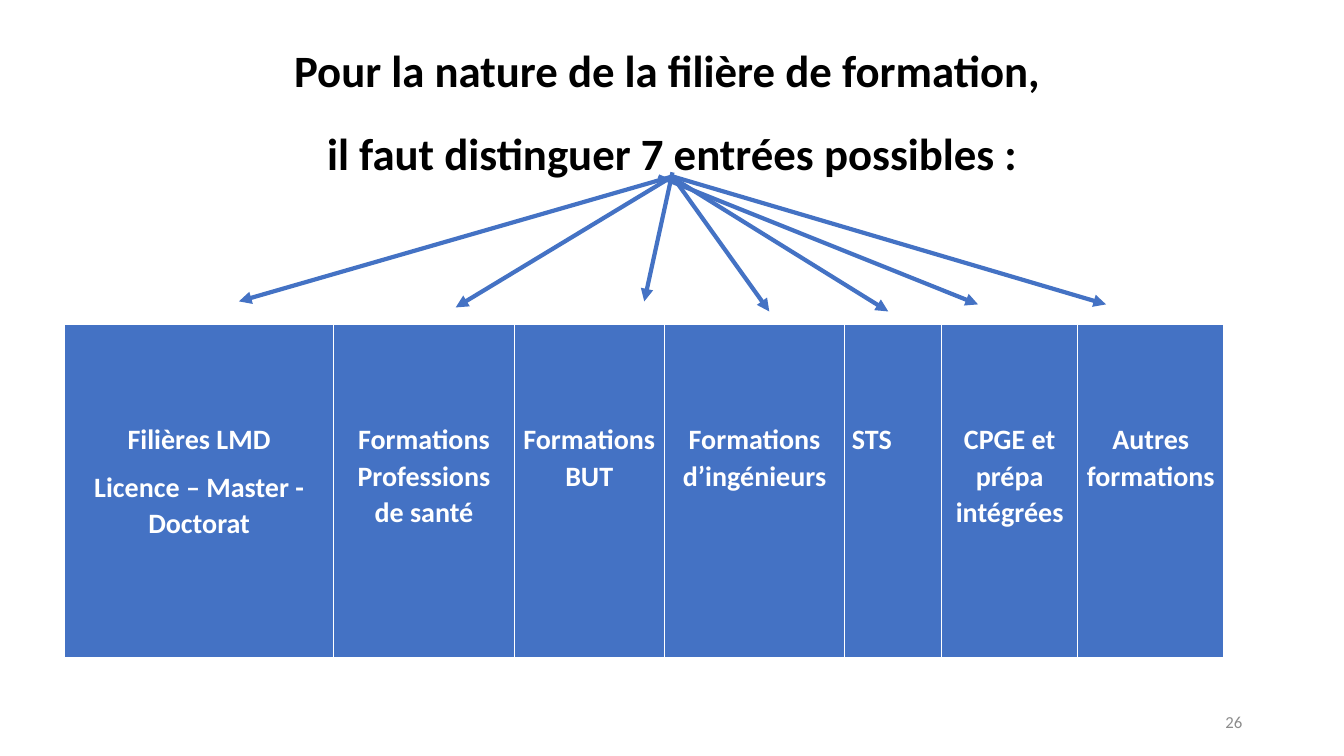
from dataclasses import dataclass

from lxml.etree import SubElement
from pptx import Presentation
from pptx.dml.color import RGBColor
from pptx.enum.shapes import MSO_CONNECTOR
from pptx.enum.text import MSO_ANCHOR, PP_ALIGN
from pptx.oxml.ns import qn
from pptx.util import Inches, Pt


@dataclass(frozen=True)
class Theme:
    """Fonts, colours and type sizes of the slide."""

    font: str = "Calibri"
    ink: RGBColor = RGBColor(0x00, 0x00, 0x00)
    paper: RGBColor = RGBColor(0xFF, 0xFF, 0xFF)
    accent: RGBColor = RGBColor(0x44, 0x72, 0xC4)
    muted: RGBColor = RGBColor(0x8C, 0x8C, 0x8C)
    title: int = 32
    body: int = 20
    small: int = 12
    spacing: float = 1.07


class SlideBuilder:
    """Draws styled elements on one slide."""

    def __init__(self, slide, theme):
        """Keep the current slide and its style."""
        self.s = slide
        self.theme = theme

    def set_text(self, tf, lines, size, color, align, bold=True, before=0, after=8):
        """Fill a text frame with one styled paragraph per line."""
        tf.word_wrap = True
        tf.text = "\n".join(lines)
        for p in tf.paragraphs:
            p.alignment = align
            p.line_spacing = self.theme.spacing
            p.space_before = Pt(before)
            p.space_after = Pt(after)
            for r in p.runs:
                r.font.name = self.theme.font
                r.font.size = Pt(size)
                r.font.bold = bold
                r.font.color.rgb = color

    def text(self, box, lines, size, color, align, anchor=MSO_ANCHOR.TOP, **style):
        """Add a text box."""
        tf = self.s.shapes.add_textbox(*map(Inches, box)).text_frame
        tf.vertical_anchor = anchor
        self.set_text(tf, lines, size, color, align, **style)

    def table(self, left, top, height, columns):
        """Add a one-row table from (width, lines, alignment) columns."""
        total = sum(width for width, _, _ in columns)
        frame = self.s.shapes.add_table(
            1, len(columns), Inches(left), Inches(top), Inches(total), Inches(height)
        )
        table = frame.table
        table.horz_banding = False
        for i, (width, lines, align) in enumerate(columns):
            table.columns[i].width = Inches(width)
            cell = table.cell(0, i)
            cell.fill.solid()
            cell.fill.fore_color.rgb = self.theme.accent
            cell.margin_left = cell.margin_right = Inches(0.07)
            cell.margin_top, cell.margin_bottom = Inches(0.95), Inches(0)
            self.set_text(
                cell.text_frame, lines, self.theme.body, self.theme.paper, align
            )

    def arrow(self, start, end):
        """Add a straight arrow."""
        c = self.s.shapes.add_connector(
            MSO_CONNECTOR.STRAIGHT, *map(Inches, (*start, *end))
        )
        c.line.color.rgb = self.theme.accent
        c.line.width = Pt(3)
        sp_pr = c.element.spPr
        SubElement(sp_pr.find(qn("a:ln")), qn("a:tailEnd"), type="triangle")
        SubElement(sp_pr, qn("a:effectLst"))


TITLE = [
    "Pour la nature de la filière de formation, ",
    "il faut distinguer 7 entrées possibles :",
]
COLUMNS = [
    (2.67, ["Filières LMD", "Licence – Master - Doctorat"], PP_ALIGN.CENTER),
    (1.79, ["Formations Professions de santé"], PP_ALIGN.CENTER),
    (1.49, ["Formations BUT"], PP_ALIGN.CENTER),
    (1.79, ["Formations d’ingénieurs"], PP_ALIGN.CENTER),
    (0.96, ["STS"], PP_ALIGN.LEFT),
    (1.35, ["CPGE et prépa intégrées"], PP_ALIGN.CENTER),
    (1.45, ["Autres formations"], PP_ALIGN.CENTER),
]
ARROWS = [
    ((6.67, 1.71), (6.39, 2.99)),
    ((6.67, 1.75), (2.37, 2.99)),
    ((6.67, 1.75), (10.97, 3.02)),
    ((6.67, 1.75), (4.52, 3.05)),
    ((6.67, 1.75), (7.63, 3.09)),
    ((6.65, 1.75), (8.81, 3.09)),
    ((6.53, 1.75), (9.7, 3.02)),
]


def main():
    """Build and save the slide."""
    prs = Presentation()
    prs.slide_width, prs.slide_height = Inches(13.33), Inches(7.5)
    theme = Theme()
    b = SlideBuilder(prs.slides.add_slide(prs.slide_layouts[6]), theme)
    b.text((0.92, 0.34, 11.5, 6.42), TITLE, theme.title, theme.ink,
           PP_ALIGN.CENTER, before=10)
    b.table(0.64, 3.22, 3.3, COLUMNS)
    b.text((9.42, 6.95, 3, 0.4), ["26"], theme.small, theme.muted,
           PP_ALIGN.RIGHT, MSO_ANCHOR.MIDDLE, bold=False, after=0)
    for start, end in ARROWS:
        b.arrow(start, end)
    prs.save("out.pptx")


if __name__ == "__main__":
    main()
